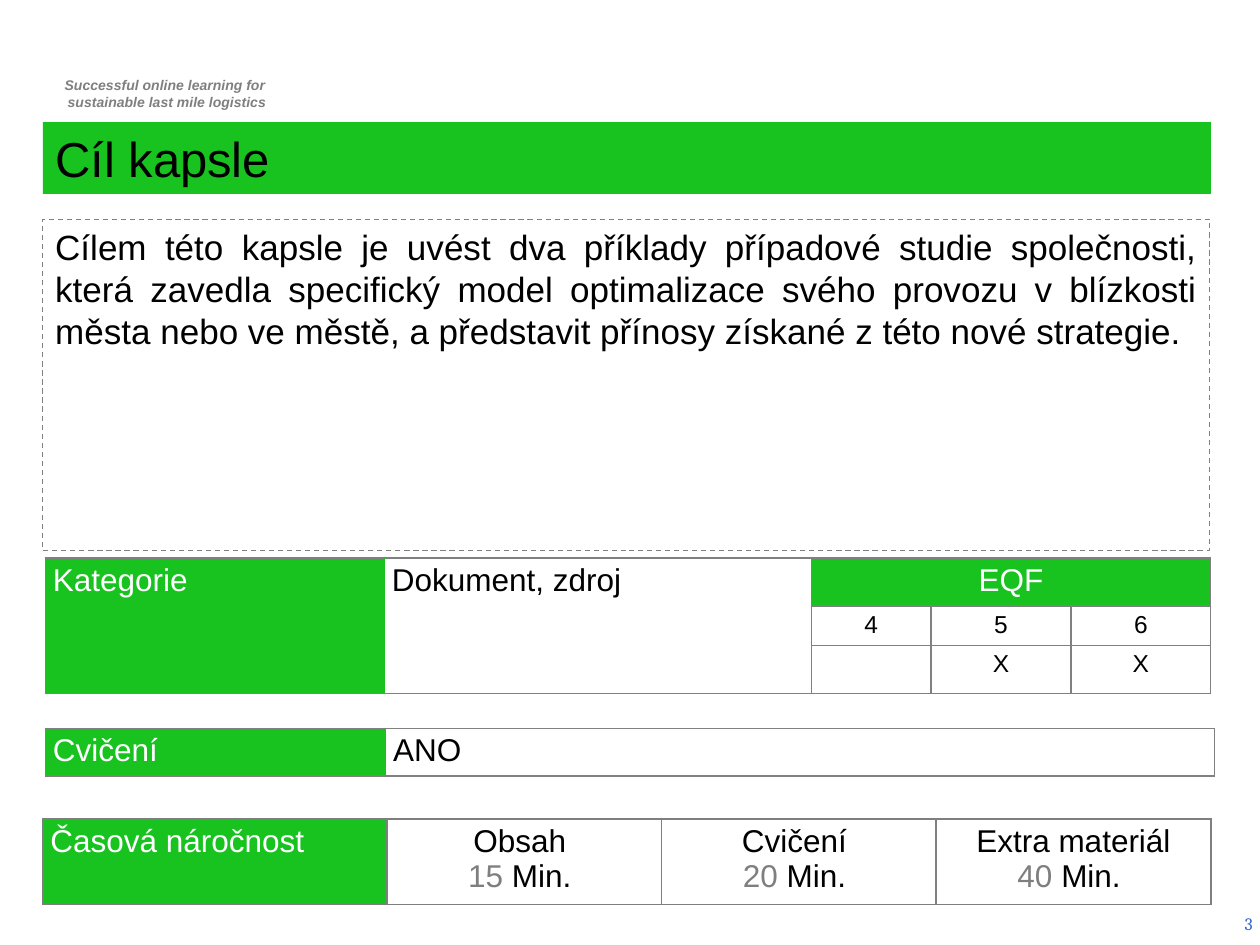
from lxml import etree
from pptx import Presentation
from pptx.dml.color import RGBColor
from pptx.enum.dml import MSO_LINE
from pptx.enum.shapes import MSO_SHAPE
from pptx.enum.text import MSO_ANCHOR, PP_ALIGN
from pptx.oxml.ns import qn
from pptx.util import Inches, Pt

LEFT, CENTER, RIGHT, JUSTIFY = PP_ALIGN.LEFT, PP_ALIGN.CENTER, PP_ALIGN.RIGHT, PP_ALIGN.JUSTIFY
TOP, MIDDLE = MSO_ANCHOR.TOP, MSO_ANCHOR.MIDDLE
RECTANGLE, DASH = MSO_SHAPE.RECTANGLE, MSO_LINE.DASH
GREEN, GREY, EDGE = "18C320", "7F7F7F", "808080"
BLACK, WHITE, BLUE = "000000", "FFFFFF", "3366CC"
GOAL = (
    "Cílem této kapsle je uvést dva příklady případové studie společnosti, "
    "která zavedla specifický model optimalizace svého provozu v blízkosti "
    "města nebo ve městě, a představit přínosy získané z této nové strategie."
)


def color(value):
    """Turn a hex string into a colour."""
    return RGBColor.from_string(value)


def write(frame, paragraphs, size=18, fill=BLACK, align=LEFT, font="Arial", bold=False, italic=False):
    """Write paragraphs, each a string or a list of (text, colour) runs."""
    frame.word_wrap = True
    for index, content in enumerate(paragraphs):
        paragraph = frame.add_paragraph() if index else frame.paragraphs[0]
        paragraph.alignment = align
        runs = [(content, fill)] if isinstance(content, str) else content
        for text, run_color in runs:
            run = paragraph.add_run()
            run.text = text
            run.font.name = font
            run.font.size = Pt(size)
            run.font.bold = bold
            run.font.italic = italic
            run.font.color.rgb = color(run_color)


def add_text(slide, box, paragraphs, anchor=TOP, **text_format):
    """Add a text box."""
    frame = slide.shapes.add_textbox(*map(Inches, box)).text_frame
    frame.vertical_anchor = anchor
    write(frame, paragraphs, **text_format)
    return frame


def add_panel(slide, box, text, fill=None, edge=None, **text_format):
    """Add a rectangle with text, filled or with a dashed outline."""
    shape = slide.shapes.add_shape(RECTANGLE, *map(Inches, box))
    shape.shadow.inherit = False
    if fill:
        shape.fill.solid()
        shape.fill.fore_color.rgb = color(fill)
    else:
        shape.fill.background()
    if edge:
        shape.line.color.rgb = color(edge)
        shape.line.width = Pt(0.75)
        shape.line.dash_style = DASH
    else:
        shape.line.fill.background()
    shape.text_frame.vertical_anchor = TOP
    write(shape.text_frame, [text], **text_format)


def set_borders(cell, edges, width):
    """Draw the left, right, top and bottom borders of a cell."""
    properties = cell._tc.get_or_add_tcPr()
    for side, value in zip("LRTB", edges):
        line = etree.SubElement(properties, qn(f"a:ln{side}"), w=str(Pt(width)))
        solid = etree.SubElement(line, qn("a:solidFill"))
        etree.SubElement(solid, qn("a:srgbClr"), val=value)


def add_table(slide, left, top, columns, rows, edge=EDGE, width=1, label_edge=GREEN):
    """Add a bordered table without fills; label_edge parts the first two columns."""
    box = map(Inches, (left, top, sum(columns), sum(rows)))
    table = slide.shapes.add_table(len(rows), len(columns), *box).table
    table.first_row = table.horz_banding = False
    for column, size in zip(table.columns, columns):
        column.width = Inches(size)
    for row, height in zip(table.rows, rows):
        row.height = Inches(height)
        for index, cell in enumerate(row.cells):
            left_edge = label_edge if index == 1 else edge
            right_edge = label_edge if index == 0 else edge
            set_borders(cell, (left_edge, right_edge, edge, edge), width)
            cell.fill.background()
            cell.margin_left = cell.margin_right = Inches(0.06)
            cell.margin_top = cell.margin_bottom = Inches(0.04)
    return table


def fill_header(cell, text, align=JUSTIFY):
    """Make a cell green with white text."""
    cell.fill.solid()
    cell.fill.fore_color.rgb = color(GREEN)
    write(cell.text_frame, [text], fill=WHITE, align=align)


def add_category_table(slide):
    """Add the table of category and EQF levels."""
    table = add_table(slide, 0.36, 4.43, [2.69, 3.39, 0.95, 1.11, 1.11], [0.37, 0.31, 0.37])
    for column in (0, 1):
        table.cell(0, column).merge(table.cell(2, column))
    table.cell(0, 2).merge(table.cell(0, 4))
    fill_header(table.cell(0, 0), "Kategorie")
    write(table.cell(0, 1).text_frame, ["Dokument, zdroj"], align=JUSTIFY)
    fill_header(table.cell(0, 2), "EQF", CENTER)
    for column, (level, mark) in enumerate([("4", ""), ("5", "X"), ("6", "X")], start=2):
        write(table.cell(1, column).text_frame, [level], size=14, align=CENTER)
        if mark:
            write(table.cell(2, column).text_frame, [mark], size=14, align=CENTER)


def add_exercise_table(slide):
    """Add the table that tells whether there is an exercise."""
    table = add_table(slide, 0.36, 5.78, [2.7, 6.58], [0.37])
    fill_header(table.cell(0, 0), "Cvičení")
    write(table.cell(0, 1).text_frame, ["ANO"], align=JUSTIFY)


def add_time_table(slide):
    """Add the table of minutes needed."""
    table = add_table(slide, 0.34, 6.5, [2.73] + [2.18] * 3, [0.68], GREY, 0.91, GREY)
    fill_header(table.cell(0, 0), "Časová náročnost")
    times = [("Obsah ", 15), ("Cvičení ", 20), ("Extra materiál", 40)]
    for column, (name, minutes) in enumerate(times, start=1):
        duration = [(f"{minutes} ", GREY), ("Min. ", BLACK)]
        write(table.cell(0, column).text_frame, [name, duration], align=CENTER)


def main():
    """Build the slide and save it."""
    presentation = Presentation()
    presentation.slide_width, presentation.slide_height = Inches(10), Inches(7.5)
    slide = presentation.slides.add_slide(presentation.slide_layouts[6])
    motto = ["Successful online learning for ", "sustainable last mile logistics"]
    frame = add_text(slide, (0.29, 0.56, 2.03, 0.37), motto, size=8, fill=GREY,
                     align=CENTER, bold=True, italic=True)
    frame.margin_left = Inches(0.14)
    add_text(slide, (7.71, 7.13, 2.33, 0.4), ["3"], anchor=MIDDLE, size=10,
             fill=BLUE, align=RIGHT, font="Cambria")
    add_panel(slide, (0.34, 0.97, 9.27, 0.57), "Cíl kapsle", fill=GREEN, size=28, )
    add_panel(slide, (0.34, 1.74, 9.26, 2.63), GOAL, edge=EDGE, size=20, align=JUSTIFY)
    add_category_table(slide)
    add_exercise_table(slide)
    add_time_table(slide)
    presentation.save("out.pptx")


if __name__ == "__main__":
    main()
